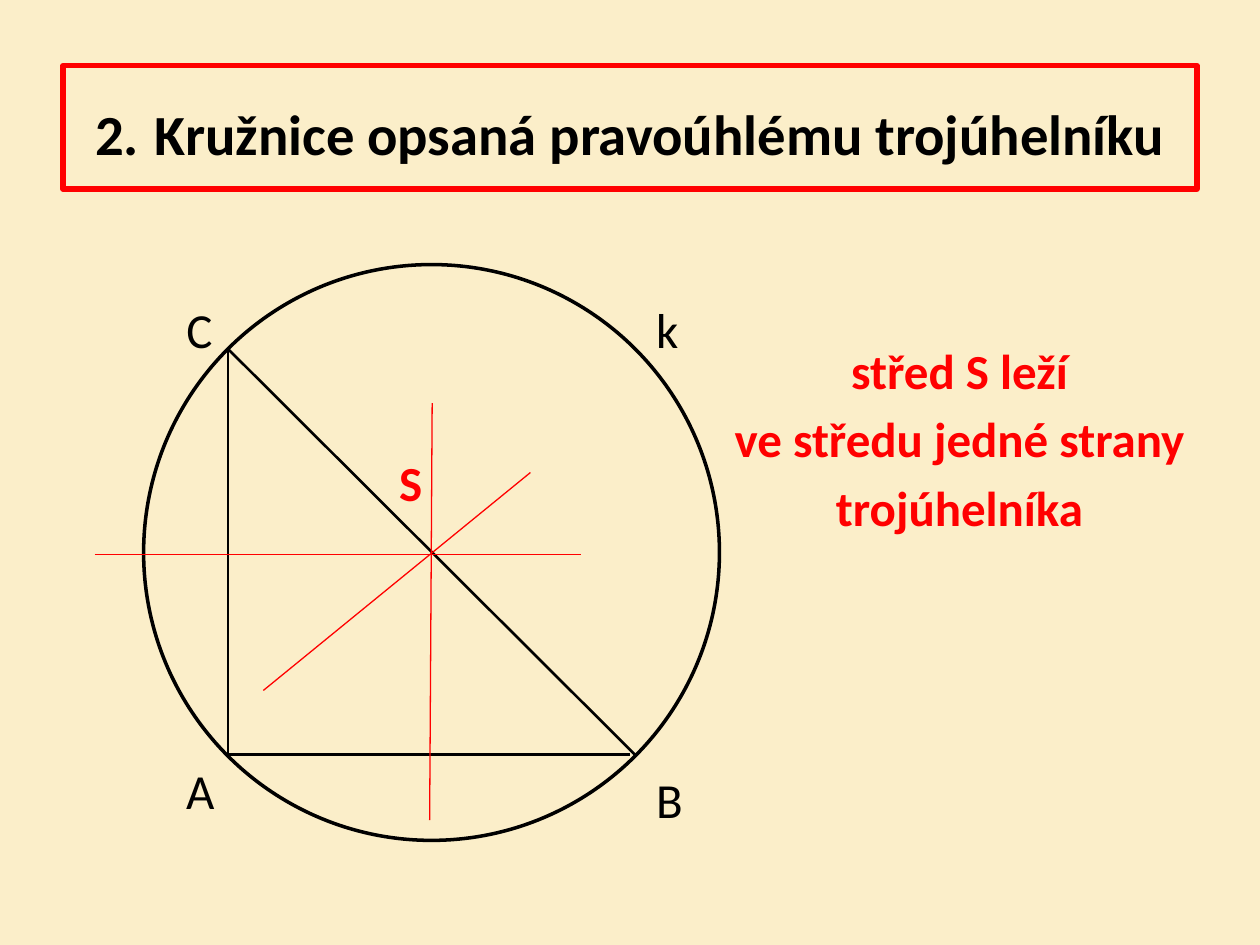
from dataclasses import dataclass

from lxml import etree
from pptx import Presentation
from pptx.dml.color import RGBColor
from pptx.enum.shapes import MSO_CONNECTOR, MSO_SHAPE
from pptx.enum.text import MSO_ANCHOR, MSO_AUTO_SIZE, PP_ALIGN
from pptx.oxml.ns import qn
from pptx.util import Inches, Pt

RECTANGLE = MSO_SHAPE.RECTANGLE
OVAL = MSO_SHAPE.OVAL
STRAIGHT = MSO_CONNECTOR.STRAIGHT
MIDDLE = MSO_ANCHOR.MIDDLE
GROW = MSO_AUTO_SIZE.SHAPE_TO_FIT_TEXT
LEFT = PP_ALIGN.LEFT
CENTER = PP_ALIGN.CENTER


@dataclass(frozen=True)
class Theme:
    font: str = "Calibri"
    background: RGBColor = RGBColor(0xFB, 0xEE, 0xC9)
    ink: RGBColor = RGBColor(0, 0, 0)
    accent: RGBColor = RGBColor(0xFF, 0, 0)
    title_size: float = 32.4
    title_gap_size: float = 39.6
    text_size: float = 28


THEME = Theme()


def style_span(span, size, color, bold):
    span.font.name = THEME.font
    span.font.size = Pt(size)
    span.font.color.rgb = color
    span.font.bold = bold


def add_outline(page, kind, at, color, weight):
    shape = page.shapes.add_shape(kind, *map(Inches, at))
    shape.shadow.inherit = False
    shape.fill.background()
    shape.line.color.rgb = color
    shape.line.width = Pt(weight)
    return shape


def add_title(page, at):
    box = add_outline(page, RECTANGLE, at, THEME.accent, 3)
    frame = box.text_frame
    frame.word_wrap = True
    frame.vertical_anchor = MIDDLE
    para = frame.paragraphs[0]
    para.alignment = CENTER
    for text, size, bold in (
        ("2.", THEME.title_size, True),
        (" ", THEME.title_gap_size, False),
        ("Kružnice opsaná pravoúhlému trojúhelníku", THEME.title_size, True),
    ):
        span = para.add_run()
        span.text = text
        style_span(span, size, THEME.ink, bold)


def add_line(page, start, end, color, weight):
    line = page.shapes.add_connector(STRAIGHT, *map(Inches, start + end))
    line.line.color.rgb = color
    line.line.width = Pt(weight)
    etree.SubElement(line._element.spPr, qn("a:effectLst"))


def add_text(page, text, at, color, bold=False, align=LEFT, space_before=0):
    box = page.shapes.add_textbox(*map(Inches, at))
    frame = box.text_frame
    frame.text = text
    frame.word_wrap = False
    frame.auto_size = GROW
    for para in frame.paragraphs:
        para.alignment = align
        para.space_before = Pt(space_before)
        for span in para.runs:
            style_span(span, THEME.text_size, color, bold)


def main():
    deck = Presentation()
    deck.slide_width, deck.slide_height = Inches(10), Inches(7.5)
    page = deck.slides.add_slide(deck.slide_layouts[6])
    page.background.fill.solid()
    page.background.fill.fore_color.rgb = THEME.background

    add_title(page, (0.5, 0.52, 9, 0.98))

    # Circumscribed circle and right triangle
    add_outline(page, OVAL, (1.14, 2.1, 4.57, 4.57), THEME.ink, 2)
    corner_a, corner_c = (1.81, 5.99), (1.81, 2.77)
    for start, end in (
        (corner_c, corner_a),
        (corner_a, (5, 5.99)),
        (corner_c, (5.04, 5.99)),
    ):
        add_line(page, start, end, THEME.ink, 1.5)

    # Perpendicular bisectors of the sides
    for start, end in (
        ((3.43, 3.2), (3.41, 6.51)),
        ((0.75, 4.4), (4.61, 4.4)),
        ((2.09, 5.48), (4.21, 3.75)),
    ):
        add_line(page, start, end, THEME.accent, 0.75)

    # Centre label and statement
    add_text(page, "S", (3.07, 3.54, 0.39, 0.57), THEME.accent, bold=True)
    add_text(
        page,
        "střed S leží\nve středu jedné strany\ntrojúhelníka",
        (5.71, 2.65, 3.81, 1.7),
        THEME.accent,
        bold=True,
        align=CENTER,
        space_before=0.2 * THEME.text_size,
    )

    # Corner and circle labels
    for name, left, top, width in (
        ("A", 1.38, 5.99, 0.43),
        ("B", 5.11, 6.06, 0.42),
        ("C", 1.38, 2.33, 0.41),
        ("k", 5.11, 2.33, 0.39),
    ):
        add_text(page, name, (left, top, width, 0.57), THEME.ink)

    deck.save("out.pptx")


if __name__ == "__main__":
    main()
